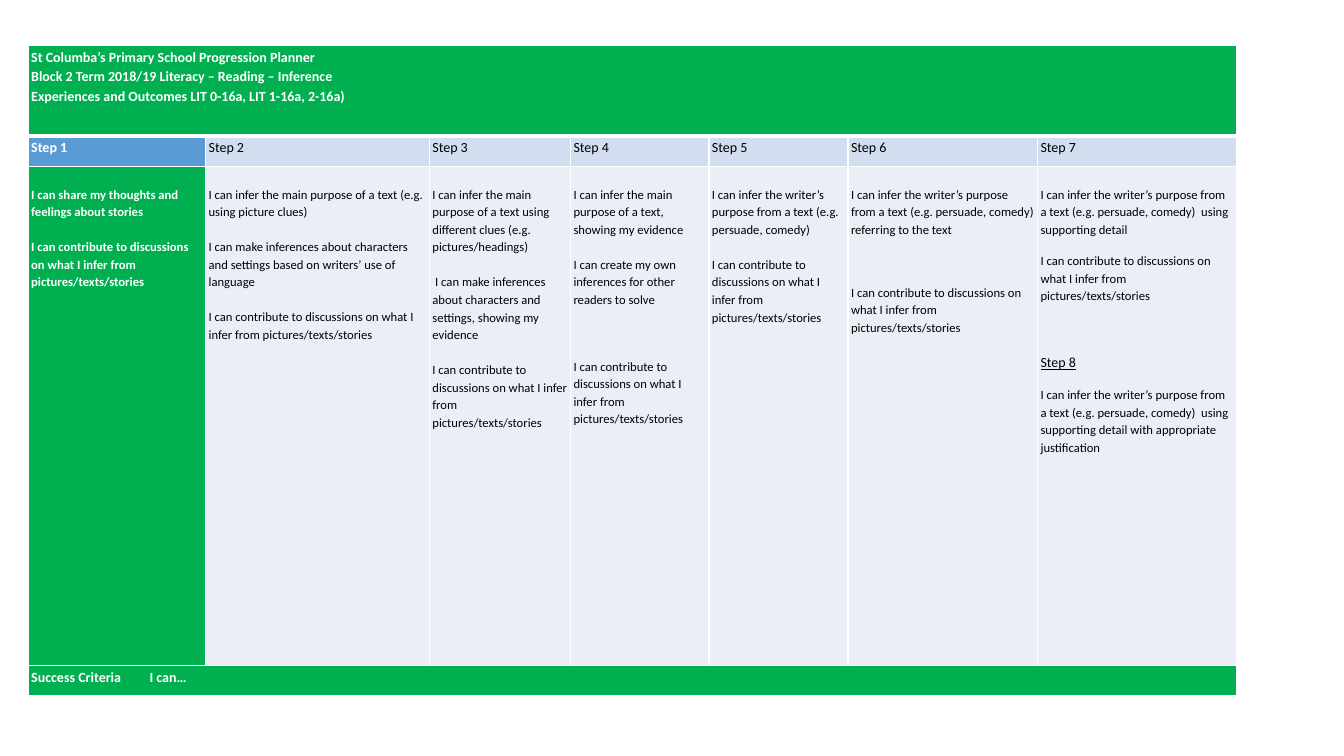
from dataclasses import dataclass

from lxml import etree
from pptx import Presentation
from pptx import util as u
from pptx.dml import color
from pptx.oxml import ns
from pptx.table import Table, _Cell


@dataclass(frozen=True)
class Theme:
    font: str = "Calibri"
    head: float = 10
    body: float = 9
    lead: float = 1.15
    after: float = 10
    blank: float = 12.5
    thin: float = 1
    thick: float = 3
    white: str = "FFFFFF"
    black: str = "000000"
    green: str = "00B050"
    blue: str = "5B9BD5"
    pale: str = "D2DEEF"
    faint: str = "EAEFF7"


THEME = Theme()
WIDE = THEME.blank + 2 * THEME.after
DEEP = 2 * THEME.blank + THEME.after


@dataclass(frozen=True)
class Para:
    text: str
    gap: float = 0
    size: float = THEME.body
    under: bool = False


@dataclass(frozen=True)
class Look:
    fill: str
    ink: str = THEME.black
    bold: bool = False


@dataclass(frozen=True)
class Step:
    name: str
    share: float
    goals: tuple[Para, ...]


GREEN = Look(THEME.green, THEME.white, True)
BLUE = Look(THEME.blue, THEME.white, True)
PALE = Look(THEME.pale)
FAINT = Look(THEME.faint)

TALK = "I can contribute to discussions on what I infer from pictures/texts/stories"
MAIN = "I can infer the main purpose of a text"
WRITER = "I can infer the writer’s purpose from a text (e.g. persuade, comedy)"

TITLE = (
    "St Columba’s Primary School Progression Planner",
    "Block 2 Term 2018/19 Literacy – Reading – Inference",
    "Experiences and Outcomes LIT 0-16a, LIT 1-16a, 2-16a)",
)

STEPS = (
    Step("Step 1", 13.2, (
        Para("I can share my thoughts and feelings about stories"),
        Para(TALK, THEME.blank),
    )),
    Step("Step 2", 16.65, (
        Para(f"{MAIN} (e.g. using picture clues)"),
        Para("I can make inferences about characters and settings "
             "based on writers’ use of language", THEME.blank),
        Para(TALK, THEME.blank),
    )),
    Step("Step 3", 10.5, (
        Para(f"{MAIN} using different clues (e.g. pictures/headings)"),
        Para(" I can make inferences about characters and settings, "
             "showing my evidence", THEME.blank),
        Para(TALK, THEME.blank),
    )),
    Step("Step 4", 10.3, (
        Para(f"{MAIN}, showing my evidence"),
        Para("I can create my own inferences for other readers to solve", THEME.blank),
        Para(TALK, DEEP),
    )),
    Step("Step 5", 10.35, (
        Para(WRITER),
        Para(TALK, THEME.blank),
    )),
    Step("Step 6", 14.1, (
        Para(f"{WRITER} referring to the text"),
        Para(TALK, WIDE),
    )),
    Step("Step 7", 14.85, (
        Para(f"{WRITER}  using supporting detail"),
        Para(TALK, THEME.after),
        Para("Step 8", WIDE + 1.5, THEME.head, True),
        Para(f"{WRITER}  using supporting detail with appropriate justification",
             THEME.after),
    )),
)
ROWS = (12, 4, 66, 4)
LEFT, TOP = 2.1, 6


def share(whole: int, part: float) -> int:
    return round(whole * part / 100)


def edge(cell: _Cell, side: str, width: float) -> None:
    line = etree.SubElement(cell._tc.get_or_add_tcPr(), ns.qn(f"a:ln{side}"))
    line.set("w", str(u.Pt(width)))
    fill = etree.SubElement(line, ns.qn("a:solidFill"))
    etree.SubElement(fill, ns.qn("a:srgbClr")).set("val", THEME.white)


def frame(table: Table) -> None:
    for row, line in enumerate(table.rows):
        for cell in line.cells:
            cell.margin_left = cell.margin_right = u.Inches(0.03)
            cell.margin_top, cell.margin_bottom = u.Inches(0.01), 0
            for side in "LRTB":
                thick = (row, side) in ((0, "B"), (1, "T"))
                edge(cell, side, THEME.thick if thick else THEME.thin)


def write(cell: _Cell, look: Look, paras: tuple[Para, ...]) -> None:
    cell.fill.solid()
    cell.fill.fore_color.rgb = color.RGBColor.from_string(look.fill)
    cell.text_frame.text = "\n".join(para.text for para in paras)
    for para, line in zip(paras, cell.text_frame.paragraphs):
        line.line_spacing = THEME.lead
        line.space_before, line.space_after = u.Pt(para.gap), u.Pt(0)
        for run in line.runs:
            run.font.name = THEME.font
            run.font.size = u.Pt(para.size)
            run.font.bold = look.bold
            run.font.underline = para.under
            run.font.color.rgb = color.RGBColor.from_string(look.ink)


def tab(cell: _Cell, place: int) -> None:
    props = cell.text_frame.paragraphs[0]._p.get_or_add_pPr()
    stops = etree.SubElement(props, ns.qn("a:tabLst"))
    etree.SubElement(stops, ns.qn("a:tab"), pos=str(place), algn="l")


def main() -> None:
    deck = Presentation()
    deck.slide_width, deck.slide_height = u.Inches(13.33), u.Inches(7.5)
    wide, high = deck.slide_width, deck.slide_height
    slide = deck.slides.add_slide(deck.slide_layouts[6])
    table = slide.shapes.add_table(
        len(ROWS), len(STEPS), share(wide, LEFT), share(high, TOP),
        share(wide, sum(step.share for step in STEPS)), share(high, sum(ROWS)),
    ).table
    table.first_row = table.horz_banding = False
    for row, part in zip(table.rows, ROWS):
        row.height = share(high, part)
    for col, step in zip(table.columns, STEPS):
        col.width = share(wide, step.share)
    frame(table)

    last = len(ROWS) - 1
    for row in (0, last):
        table.cell(row, 0).merge(table.cell(row, len(STEPS) - 1))
    write(table.cell(0, 0), GREEN, tuple(Para(t, size=THEME.head) for t in TITLE))
    for col, step in enumerate(STEPS):
        first = col == 0
        write(table.cell(1, col), BLUE if first else PALE,
              (Para(step.name, size=THEME.head),))
        goals = table.cell(2, col)
        write(goals, GREEN if first else FAINT, step.goals)
        goals.margin_top = u.Inches(0.01) + u.Pt(THEME.blank)
    foot = table.cell(last, 0)
    write(foot, GREEN, (Para("Success Criteria\tI can…", size=THEME.head),))
    tab(foot, share(wide, 8.8))
    deck.save("out.pptx")


if __name__ == "__main__":
    main()
